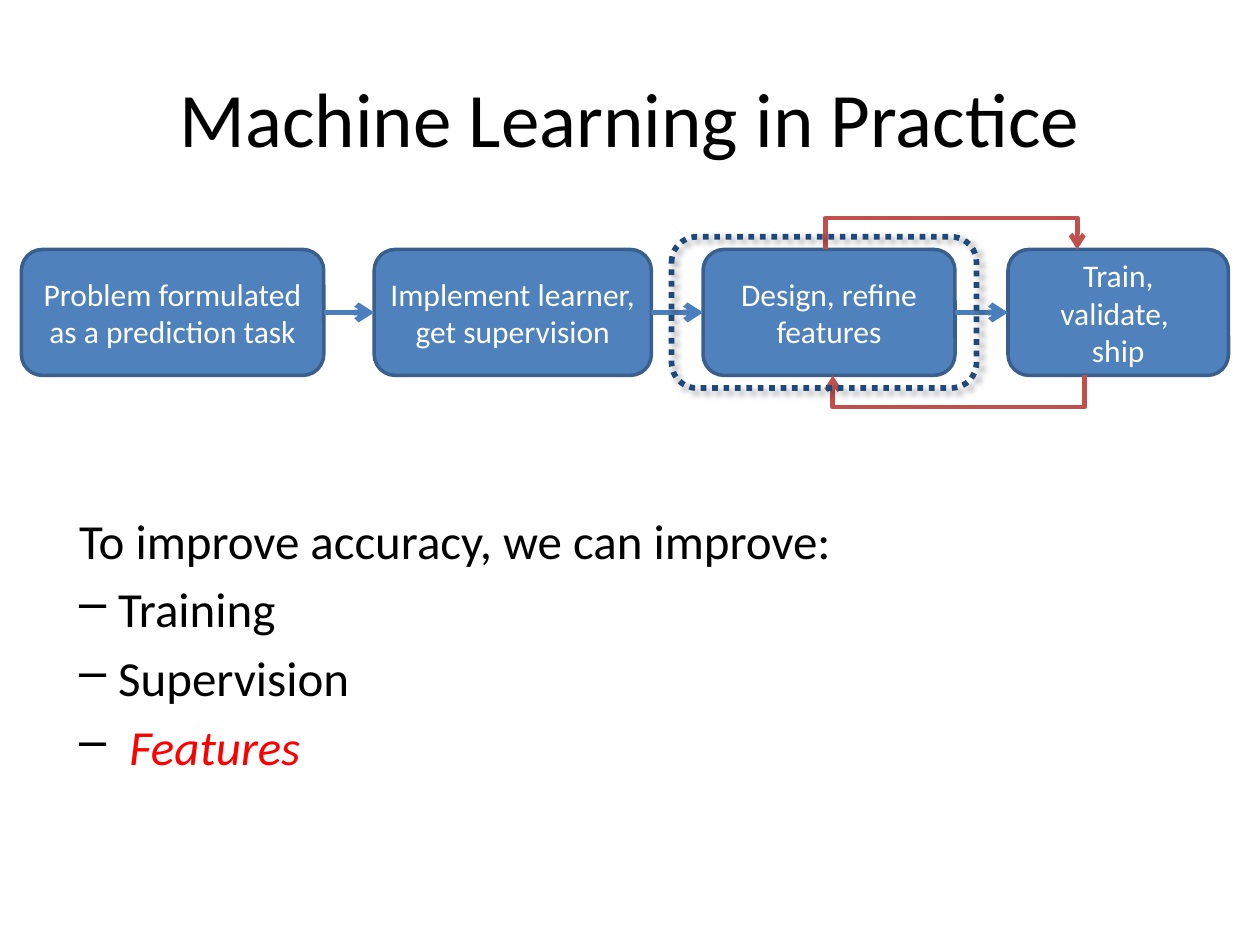
import pptx
import pptx.util
import pptx.oxml
import pptx.oxml.ns
from lxml import etree
from pptx.dml.color import RGBColor
from pptx.enum.dml import MSO_LINE
from pptx.enum.shapes import MSO_CONNECTOR, MSO_SHAPE
from pptx.enum.text import MSO_ANCHOR, PP_ALIGN

Inches, Pt, qn = pptx.util.Inches, pptx.util.Pt, pptx.oxml.ns.qn
COLORS = {name: RGBColor.from_string(value) for name, value in {
    "black": "000000", "white": "FFFFFF", "red": "FF0000", "step": "4F81BD",
    "step_edge": "3A5F8C", "arrow": "4B7EBC", "loop": "C0504D", "focus": "1F497D",
}.items()}


def set_line(shape, color, width, arrow=False):
    shape.line.color.rgb = COLORS[color]
    shape.line.width = Pt(width)
    if arrow:
        etree.SubElement(shape.line._get_or_add_ln(), qn("a:tailEnd"), type="arrow")


def set_font(paragraph, size, color):
    paragraph.font.name = "Calibri"
    paragraph.font.size = Pt(size)
    paragraph.font.color.rgb = COLORS[color]


deck = pptx.Presentation()
deck.slide_width, deck.slide_height = Inches(10), Inches(7.5)
page = deck.slides.add_slide(deck.slide_layouts[5])

# Title
title = page.shapes.title
title.left, title.top, title.width, title.height = (
    Inches(0.5), Inches(0.3), Inches(9), Inches(1.25))
title.text_frame.text = "Machine Learning in Practice"
title.text_frame.vertical_anchor = MSO_ANCHOR.MIDDLE
title.text_frame.paragraphs[0].alignment = PP_ALIGN.CENTER
set_font(title.text_frame.paragraphs[0], 44, "black")

# Ways to improve accuracy
body = page.shapes.add_textbox(Inches(0.33), Inches(4), Inches(9.92), Inches(3.17))
body.text_frame.word_wrap = True
items = ["To improve accuracy, we can improve:", "Training", "Supervision", " "]
for index, text in enumerate(items):
    para = body.text_frame.paragraphs[0] if index == 0 else body.text_frame.add_paragraph()
    para.add_run().text = text
    properties = para._p.get_or_add_pPr()
    if index == 0:
        properties.set("marL", str(Inches(0.2)))
    else:
        properties.set("marL", str(Inches(0.51)))
        properties.set("indent", str(Inches(-0.31)))
        etree.SubElement(properties, qn("a:buChar"), char="–")
        para.space_before = Pt(5.6)
    set_font(para, 28, "black")
features = para.add_run()
features.text = "Features"
features.font.italic = True
features.font.color.rgb = COLORS["red"]

# Process steps: left, width, side inset, lines
row_top, row_height = 1.98, 1
steps = [
    (0.17, 2.4, 0.1, ["Problem formulated as a prediction task"]),
    (2.97, 2.2, 0, ["Implement learner, get supervision"]),
    (5.58, 2, 0.1, ["Design, refine features"]),
    (8, 1.75, 0.1, ["Train, validate, ", "ship"]),
]
for left, width, inset, lines in steps:
    box = page.shapes.add_shape(MSO_SHAPE.ROUNDED_RECTANGLE, Inches(left),
                                Inches(row_top), Inches(width), Inches(row_height))
    box.shadow.inherit = False
    box.fill.solid()
    box.fill.fore_color.rgb = COLORS["step"]
    set_line(box, "step_edge", 2)
    frame = box.text_frame
    frame.word_wrap = True
    frame.vertical_anchor = MSO_ANCHOR.MIDDLE
    frame.margin_left = frame.margin_right = Inches(inset)
    frame.text = "\n".join(lines)
    for para in frame.paragraphs:
        para.alignment = PP_ALIGN.CENTER
        set_font(para, 18, "white")

# Arrows from each step to the next
middle = Inches(row_top + row_height / 2)
for (left, width, *_), (next_left, *_) in zip(steps, steps[1:]):
    arrow = page.shapes.add_connector(MSO_CONNECTOR.STRAIGHT, Inches(left + width),
                                      middle, Inches(next_left), middle)
    etree.SubElement(arrow._element.spPr, qn("a:effectLst"))
    set_line(arrow, "arrow", 3.25, arrow=True)

# Feedback loops between the last two steps: start x, end x, edge y, turn y
for start, end, edge, turn in [(8.61, 6.61, 2.98, 3.23), (6.55, 8.55, 1.98, 1.73)]:
    builder = page.shapes.build_freeform(Inches(start), Inches(edge))
    builder.add_line_segments(
        [(Inches(x), Inches(y)) for x, y in [(start, turn), (end, turn), (end, edge)]],
        close=False)
    loop = builder.convert_to_shape()
    loop.shadow.inherit = False
    loop.fill.background()
    set_line(loop, "loop", 2.75, arrow=True)

# Dotted frame around the feature step
focus = page.shapes.add_shape(MSO_SHAPE.ROUNDED_RECTANGLE, Inches(5.33), Inches(1.88),
                              Inches(2.42), Inches(1.2))
focus.fill.background()
set_line(focus, "focus", 3.25)
focus.line.dash_style = MSO_LINE.ROUND_DOT
focus.shadow.inherit = False
shadow = etree.SubElement(focus._element.spPr.find(qn("a:effectLst")), qn("a:outerShdw"),
                          blurRad=str(Pt(4)), dist=str(Pt(3)), dir=str(45 * 60000))
shade = etree.SubElement(shadow, qn("a:srgbClr"), val=str(COLORS["black"]))
etree.SubElement(shade, qn("a:alpha"), val="40000")

deck.save("out.pptx")
